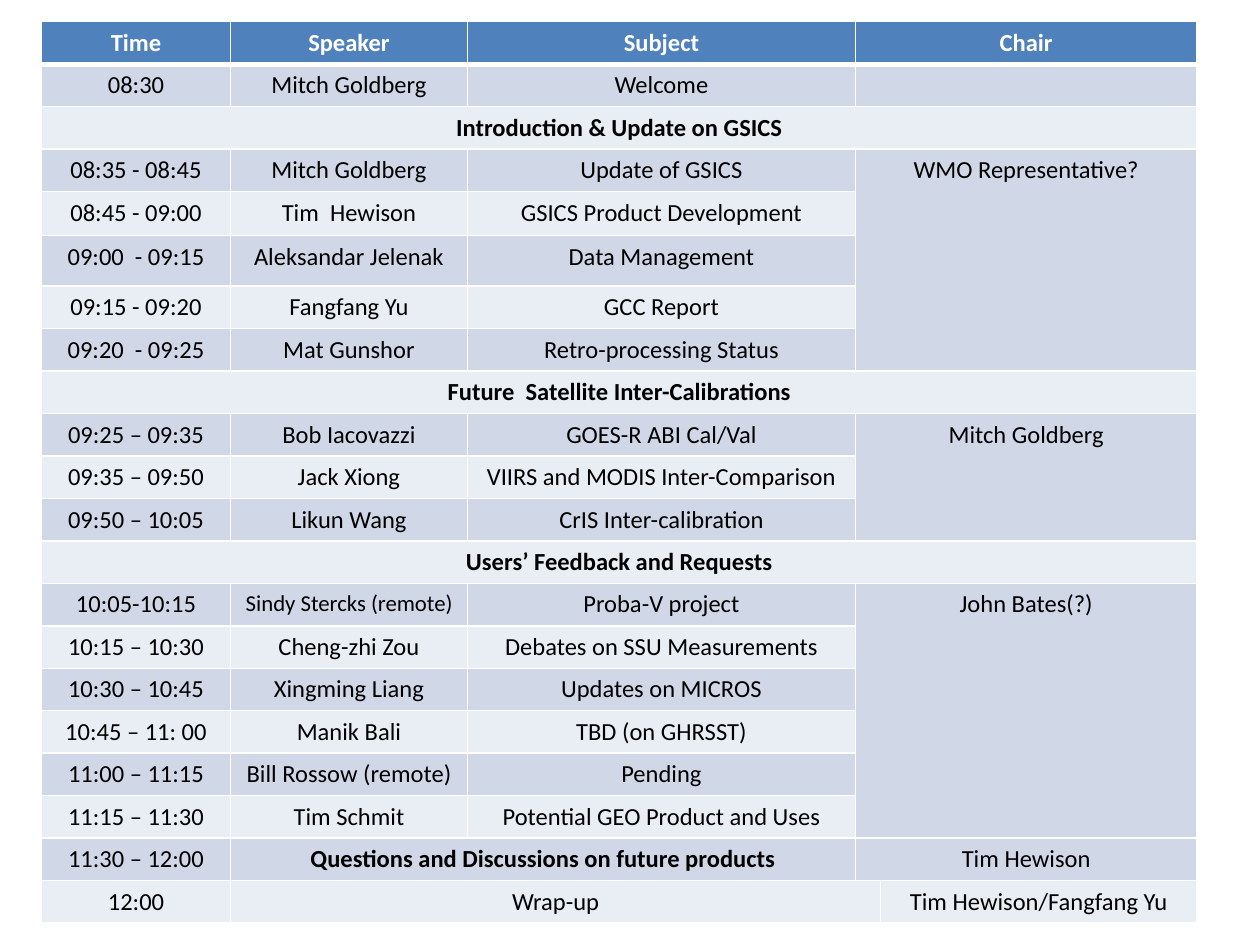
from lxml import etree
from pptx import Presentation
from pptx import util as u
from pptx.dml.color import RGBColor
from pptx.enum import text
from pptx.oxml import ns

HEAD, ODD, EVEN, WHITE, BLACK = "4F81BD", "D0D8E8", "E9EDF4", "FFFFFF", "000000"
WIDE, HIGH = 10, 7.5
COLS = [1.5, 1.88, 3.08, 0.2, 2.51]
ROWS = [0.33] * 4 + [0.35, 0.4] + [0.33] * 15

PARTS = [
    ("Introduction & Update on GSICS", "WMO Representative?", [
        ("08:35 - 08:45", "Mitch Goldberg", "Update of GSICS"),
        ("08:45 - 09:00", "Tim  Hewison", "GSICS Product Development"),
        ("09:00  - 09:15", "Aleksandar Jelenak", "Data Management"),
        ("09:15 - 09:20", "Fangfang Yu", "GCC Report"),
        ("09:20  - 09:25", "Mat Gunshor", "Retro-processing Status"),
    ]),
    ("Future  Satellite Inter-Calibrations", "Mitch Goldberg", [
        ("09:25 – 09:35", "Bob Iacovazzi", "GOES-R ABI Cal/Val"),
        ("09:35 – 09:50", "Jack Xiong", "VIIRS and MODIS Inter-Comparison"),
        ("09:50 – 10:05", "Likun Wang", "CrIS Inter-calibration"),
    ]),
    ("Users’ Feedback and Requests", "John Bates(?)", [
        ("10:05-10:15", "Sindy Stercks (remote)", "Proba-V project"),
        ("10:15 – 10:30", "Cheng-zhi Zou", "Debates on SSU Measurements"),
        ("10:30 – 10:45", "Xingming Liang", "Updates on MICROS"),
        ("10:45 – 11: 00", "Manik Bali", "TBD (on GHRSST)"),
        ("11:00 – 11:15", "Bill Rossow (remote)", "Pending"),
        ("11:15 – 11:30", "Tim Schmit", "Potential GEO Product and Uses"),
    ]),
]


def tint(code):
    """Turn a hex string into a colour."""
    return RGBColor.from_string(code)


class Deck:
    """Holds the style, the slide and its table."""

    def __init__(self):
        """Start a deck with one blank slide."""
        self.show = Presentation()
        self.show.slide_width, self.show.slide_height = u.Inches(WIDE), u.Inches(HIGH)
        self.slide = self.show.slides.add_slide(self.show.slide_layouts[6])
        self.style = {"name": "Calibri", "size": u.Pt(14), "bold": False}

    def table(self, left, top):
        """Add the ruled, banded table at shares of the slide's size."""
        frame = self.slide.shapes.add_table(
            len(ROWS), len(COLS), int(self.show.slide_width * left),
            int(self.show.slide_height * top), u.Inches(sum(COLS)), u.Inches(sum(ROWS)))
        self.grid = frame.table
        for col, size in zip(self.grid.columns, COLS):
            col.width = u.Inches(size)
        for row, size in zip(self.grid.rows, ROWS):
            row.height = u.Inches(size)
        for row in range(len(ROWS)):
            for col in range(len(COLS)):
                self.base(row, self.grid.cell(row, col))

    def base(self, row, cell):
        """Give a cell its fill, its rules and its empty text size."""
        cell.fill.solid()
        cell.fill.fore_color.rgb = tint(HEAD if row == 0 else ODD if row % 2 else EVEN)
        rules = {"L": 1, "R": 1, "T": 3 if row == 1 else 1, "B": 1 if row else 3}
        for spot, (side, width) in enumerate(rules.items()):
            line = etree.Element(ns.qn(f"a:ln{side}"), w=str(u.Pt(width)))
            fill = etree.SubElement(line, ns.qn("a:solidFill"))
            etree.SubElement(fill, ns.qn("a:srgbClr"), val=WHITE)
            cell._tc.get_or_add_tcPr().insert(spot, line)
        para = cell.text_frame.paragraphs[0]
        etree.SubElement(para._p, ns.qn("a:endParaRPr"), sz="1400")

    def cell(self, row, col, words, wide=1, tall=1, ink=BLACK, **style):
        """Write centred words in a cell, spanning columns and rows."""
        cell = self.grid.cell(row, col)
        if wide * tall > 1:
            cell.merge(self.grid.cell(row + tall - 1, col + wide - 1))
        if not words:
            return
        para = cell.text_frame.paragraphs[0]
        para.alignment = text.PP_ALIGN.CENTER
        run = para.add_run()
        run.text = words
        for key, value in {**self.style, **style}.items():
            setattr(run.font, key, value)
        run.font.color.rgb = tint(ink)

    def line(self, row, words, **style):
        """Write words in the leading cells of a row."""
        for col, word in enumerate(words):
            small = {"size": u.Pt(13)} if word.startswith("Sindy") else {}
            self.cell(row, col, word, **style, **small)


def main():
    """Build the agenda."""
    deck = Deck()
    deck.table(0.033, 0.023)
    deck.line(0, ("Time", "Speaker", "Subject"), ink=WHITE, bold=True)
    deck.cell(0, 3, "Chair", wide=2, ink=WHITE, bold=True)
    deck.line(1, ("08:30", "Mitch Goldberg", "Welcome"))
    deck.cell(1, 3, "", wide=2)
    row = 2
    for title, chair, talks in PARTS:
        deck.cell(row, 0, title, wide=5, bold=True)
        deck.cell(row + 1, 3, chair, wide=2, tall=len(talks))
        for step, talk in enumerate(talks, 1):
            deck.line(row + step, talk)
        row += len(talks) + 1
    deck.cell(row, 0, "11:30 – 12:00")
    deck.cell(row, 1, "Questions and Discussions on future products", wide=2, bold=True)
    deck.cell(row, 3, "Tim Hewison", wide=2)
    deck.cell(row + 1, 0, "12:00")
    deck.cell(row + 1, 1, "Wrap-up", wide=3)
    deck.cell(row + 1, 4, "Tim Hewison/Fangfang Yu")
    deck.show.save("out.pptx")


if __name__ == "__main__":
    main()
